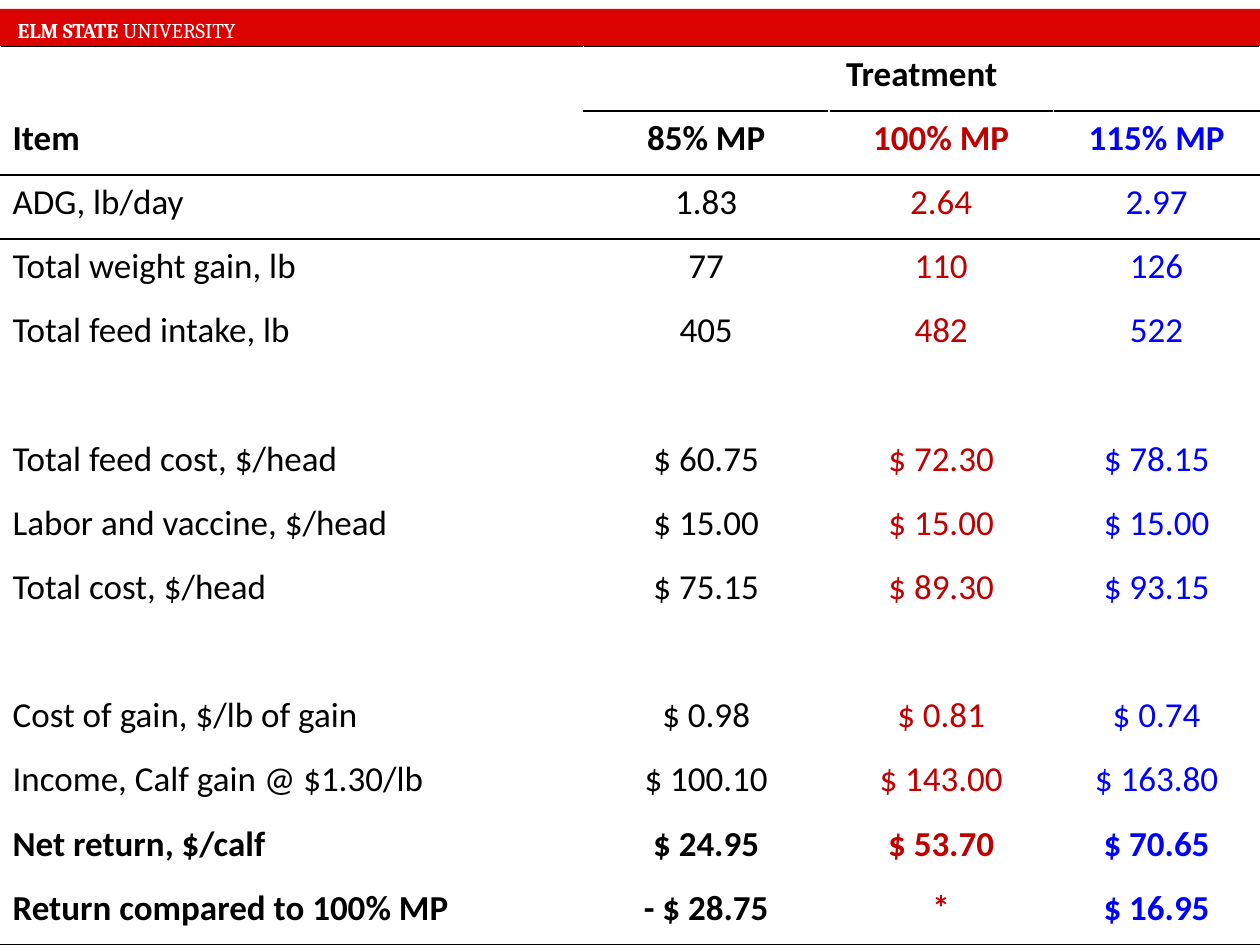
from lxml.etree import SubElement
from pptx import Presentation
from pptx.dml.color import RGBColor
from pptx.enum.shapes import MSO_SHAPE as Shape
from pptx.enum.text import MSO_ANCHOR as Anchor, PP_ALIGN as Align
from pptx.oxml.ns import qn
from pptx.util import Inches, Pt

COLORS = {"band": "DB0202", "white": "FFFFFF", "black": "000000",
          "red": "C00000", "blue": "0000FF"}
COLUMN_COLORS = ["black", "black", "red", "blue"]
COLUMN_SHARES = [0.463, 0.195, 0.178, 0.164]
ROWS = [
    ["", "Treatment", "", ""],
    ["Item", "85% MP", "100% MP", "115% MP"],
    ["ADG, lb/day", "1.83", "2.64", "2.97"],
    ["Total weight gain, lb", "77", "110", "126"],
    ["Total feed intake, lb", "405", "482", "522"],
    ["", "", "", ""],
    ["Total feed cost, $/head", "$ 60.75", "$ 72.30", "$ 78.15"],
    ["Labor and vaccine, $/head", "$ 15.00", "$ 15.00", "$ 15.00"],
    ["Total cost, $/head", "$ 75.15", "$ 89.30", "$ 93.15"],
    ["", "", "", ""],
    ["Cost of gain, $/lb of gain", "$ 0.98", "$ 0.81", "$ 0.74"],
    ["Income, Calf gain @ $1.30/lb", "$ 100.10", "$ 143.00", "$ 163.80"],
    ["Net return, $/calf", "$ 24.95", "$ 53.70", "$ 70.65"],
    ["Return compared to 100% MP", "- $ 28.75", "*", "$ 16.95"],
]
BOLD_ROWS = {0, 1, 12, 13}
RULES = {0: range(4), 1: range(1, 4), 2: range(4), 3: range(4), 14: range(4)}


class SlideBuilder:
    """Holds the style and the current slide, and draws its elements."""

    def __init__(self, deck):
        self.width, self.height = deck.slide_width, deck.slide_height
        self.page = deck.slides.add_slide(deck.slide_layouts[6])

    def style(self, span, font, size, color, bold):
        span.font.name, span.font.size, span.font.bold = font, Pt(size), bold
        span.font.color.rgb = RGBColor.from_string(COLORS[color])

    def band(self, top, height, parts):
        box = self.page.shapes.add_shape(
            Shape.RECTANGLE, 0, int(top * self.height),
            self.width, int(height * self.height))
        box.shadow.inherit = False
        box.fill.solid()
        box.fill.fore_color.rgb = RGBColor.from_string(COLORS["band"])
        box.line.fill.background()
        frame = box.text_frame
        frame.vertical_anchor = Anchor.MIDDLE
        frame.margin_left = Inches(0.14)
        frame.margin_top = frame.margin_bottom = 0
        para = frame.paragraphs[0]
        para.alignment = Align.LEFT
        for text, bold in parts:
            span = para.add_run()
            span.text = text
            self.style(span, "Cambria", 12, "white", bold)

    def border(self, cell, side):
        properties = cell._tc.get_or_add_tcPr()
        line = SubElement(properties, qn(f"a:ln{side}"), w=str(Pt(1)))
        fill = SubElement(line, qn("a:solidFill"))
        SubElement(fill, qn("a:srgbClr"), val=COLORS["black"])

    def cell(self, cell, text, column, color, bold):
        cell.fill.solid()
        cell.fill.fore_color.rgb = RGBColor.from_string(COLORS["white"])
        if text:
            cell.text = text
            para = cell.text_frame.paragraphs[0]
            para.alignment = Align.CENTER if column else Align.LEFT
            self.style(para.runs[0], "Calibri", 20, color, bold)

    def table(self, top, rows):
        height = int((1 - top) * self.height)
        table = self.page.shapes.add_table(
            len(rows), len(COLUMN_SHARES), 0, int(top * self.height),
            self.width, height).table
        table.first_row = table.horz_banding = False
        for column, share in zip(table.columns, COLUMN_SHARES):
            column.width = int(share * self.width)
        for r, texts in enumerate(rows):
            table.rows[r].height = height // len(rows)
            for c, text in enumerate(texts):
                cell = table.cell(r, c)
                for side, rule in (("T", r), ("B", r + 1)):
                    if c in RULES.get(rule, ()):
                        self.border(cell, side)
                color = COLUMN_COLORS[c] if r else "black"
                self.cell(cell, text, c, color, r in BOLD_ROWS)
        table.cell(0, 1).merge(table.cell(0, 3))


def main():
    deck = Presentation()
    deck.slide_width, deck.slide_height = Inches(10), Inches(7.5)
    builder = SlideBuilder(deck)
    builder.band(0.07 / 7.5, 0.34 / 7.5,
                 [("ELM STATE ", True), ("UNIVERSITY", False)])
    builder.table(0.37 / 7.5, ROWS)
    deck.save("out.pptx")


if __name__ == "__main__":
    main()
